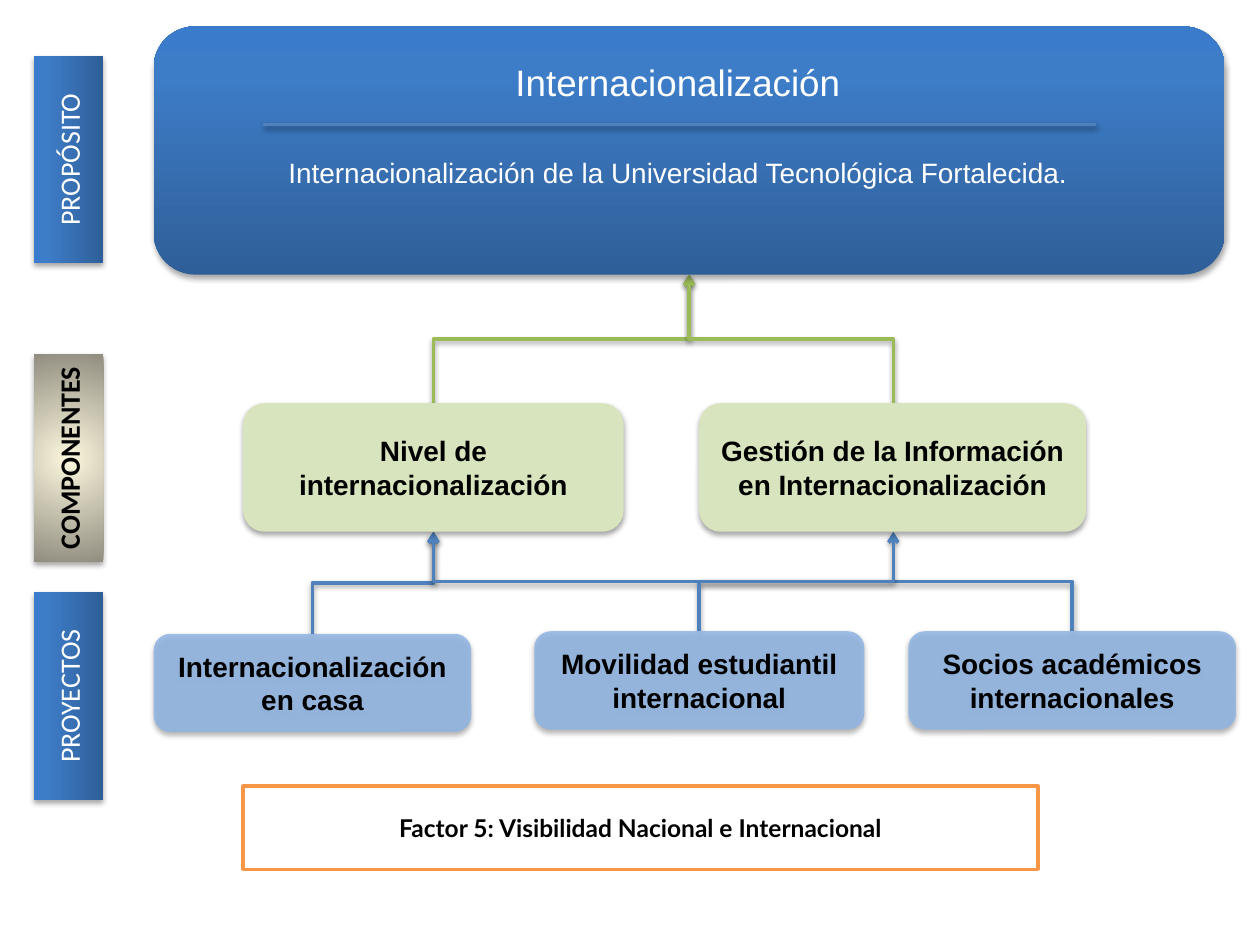
import pptx
import pptx.util
import pptx.dml.color
import pptx.enum.shapes
import pptx.enum.text
import pptx.oxml
import pptx.oxml.ns
from pptx.util import Inches

COLORS = {
    "white": "FFFFFF", "black": "000000", "blue": "4F81BD", "green": "9BBB59",
    "component": "D7E4BD", "project": "8EB4E3", "orange": "F79646",
    "deep": "2F5F99", "mid": "3D7CC7", "bright": "3A7CCB",
    "cream": "FCF7DD", "stone": "918E81",
}
NAMESPACE = pptx.oxml.ns.nsdecls("a")
BLUE_STOPS = [(0, "deep"), (80, "mid"), (100, "bright")]
BLUE_DIRECTION = '<a:lin ang="16200000" scaled="0"/>'
RADIAL_STOPS = [(0, "cream"), (100, "stone")]
RADIAL_DIRECTION = ('<a:path path="circle"><a:fillToRect l="50000" t="50000" '
                    'r="50000" b="50000"/></a:path>')
SHAPES = pptx.enum.shapes.MSO_SHAPE
CONNECTORS = pptx.enum.shapes.MSO_CONNECTOR
MIDDLE = pptx.enum.text.MSO_ANCHOR.MIDDLE
CENTER = pptx.enum.text.PP_ALIGN.CENTER


def write(shape, text, size, font, color, bold=False):
    frame = shape.text_frame
    frame.word_wrap = True
    frame.auto_size = pptx.enum.text.MSO_AUTO_SIZE.NONE
    frame.vertical_anchor = MIDDLE
    frame.text = text
    paragraph = frame.paragraphs[0]
    paragraph.alignment = CENTER
    paragraph.font.size = pptx.util.Pt(size)
    paragraph.font.name = font
    paragraph.font.bold = bold
    paragraph.font.color.rgb = pptx.dml.color.RGBColor.from_string(COLORS[color])


def add_shadow(shape, distance, alpha):
    shape._element.spPr.append(pptx.oxml.parse_xml(
        f'<a:effectLst {NAMESPACE}><a:outerShdw blurRad="40000" dist="{distance}" '
        f'dir="5400000" rotWithShape="0"><a:srgbClr val="{COLORS["black"]}">'
        f'<a:alpha val="{alpha}000"/></a:srgbClr></a:outerShdw></a:effectLst>'))


presentation = pptx.Presentation()
presentation.slide_width = Inches(10)
presentation.slide_height = Inches(7.5)
slide = presentation.slides.add_slide(presentation.slide_layouts[5])
shapes = slide.shapes

elbows = [
    (2.48, 5.03, 3.44, 4.22, "blue"),
    (8.51, 5.01, 3.44, 4.22, "blue"),
    (5.55, 5.01, 7.09, 4.22, "blue"),
    (3.44, 3.2, 5.47, 2.18, "green"),
    (7.09, 3.2, 5.47, 2.18, "green"),
]
lines = []
for start_x, start_y, end_x, end_y, color in elbows:
    center_x, center_y = (start_x + end_x) / 2, (start_y + end_y) / 2
    half_rise, half_run = (start_y - end_y) / 2, (end_x - start_x) / 2
    connector = shapes.add_connector(
        CONNECTORS.ELBOW,
        Inches(center_x - half_rise), Inches(center_y - half_run),
        Inches(center_x + half_rise), Inches(center_y + half_run))
    connector._element.spPr.xfrm.set("rot", "16200000")
    lines.append((connector, color, True))

gradient_boxes = [
    (SHAPES.RECTANGLE, -0.28, 0.99, 1.65, 0.55, "PROPÓSITO", "white", BLUE_STOPS, BLUE_DIRECTION),
    (SHAPES.RECTANGLE, -0.28, 3.36, 1.65, 0.55, "COMPONENTES", "black", RADIAL_STOPS, RADIAL_DIRECTION),
    (SHAPES.RECTANGLE, -0.28, 5.25, 1.65, 0.55, "PROYECTOS", "white", BLUE_STOPS, BLUE_DIRECTION),
    (SHAPES.ROUNDED_RECTANGLE, 1.22, 0.21, 8.5, 1.97, "", "white", BLUE_STOPS, BLUE_DIRECTION),
]
for kind, left, top, width, height, text, color, stops, direction in gradient_boxes:
    box = shapes.add_shape(kind, Inches(left), Inches(top), Inches(width), Inches(height))
    box.line.fill.background()
    stop_list = "".join(
        f'<a:gs pos="{position}000"><a:srgbClr val="{COLORS[name]}"/></a:gs>'
        for position, name in stops)
    box._element.spPr.insert(2, pptx.oxml.parse_xml(
        f'<a:gradFill {NAMESPACE} rotWithShape="1"><a:gsLst>{stop_list}</a:gsLst>'
        f'{direction}</a:gradFill>'))
    add_shadow(box, 23000, 35)
    if text:
        box.rotation = 270
        write(box, text, 16, "Calibri", color, bold=color == "black")

title = shapes.title
title.left, title.top = Inches(1.54), Inches(0.45)
title.width, title.height = Inches(7.68), Inches(0.4)
write(title, "Internacionalización", 21, "Arial", "white")
shapes._spTree.append(title._element)

purpose = shapes.add_textbox(Inches(1.54), Inches(1.18), Inches(7.68), Inches(0.38))
write(purpose, "Internacionalización de la Universidad Tecnológica Fortalecida.",
      16, "Arial", "white")

divider = shapes.add_connector(
    CONNECTORS.STRAIGHT, Inches(2.09), Inches(0.99), Inches(8.7), Inches(0.99))
lines.append((divider, "blue", False))

for connector, color, has_arrow in lines:
    connector.line.color.rgb = pptx.dml.color.RGBColor.from_string(COLORS[color])
    connector.line.width = pptx.util.Pt(2)
    if has_arrow:
        connector.line._get_or_add_ln().append(
            pptx.oxml.parse_xml(f'<a:tailEnd {NAMESPACE} type="arrow"/>'))
    add_shadow(connector, 20000, 38)

cards = [
    (1.93, 3.2, 3.02, 1.02, "component", "Nivel de internacionalización"),
    (5.55, 3.2, 3.07, 1.02, "component", "Gestión de la Información en Internacionalización"),
    (1.22, 5.03, 2.52, 0.78, "project", "Internacionalización en casa"),
    (4.24, 5.01, 2.62, 0.78, "project", "Movilidad estudiantil internacional"),
    (7.21, 5.01, 2.6, 0.78, "project", "Socios académicos internacionales"),
]
for left, top, width, height, color, text in cards:
    card = shapes.add_shape(SHAPES.ROUNDED_RECTANGLE, Inches(left), Inches(top),
                            Inches(width), Inches(height))
    card.fill.solid()
    card.fill.fore_color.rgb = pptx.dml.color.RGBColor.from_string(COLORS[color])
    if color == "project":
        fill_color = card._element.spPr.find(".//" + pptx.oxml.ns.qn("a:srgbClr"))
        fill_color.append(pptx.oxml.parse_xml(f'<a:alpha {NAMESPACE} val="84000"/>'))
    card.line.fill.background()
    add_shadow(card, 23000, 35)
    write(card, text, 16, "Arial", "black", bold=True)

factor = shapes.add_shape(SHAPES.RECTANGLE, Inches(1.93), Inches(6.24),
                          Inches(6.31), Inches(0.66))
factor.shadow.inherit = False
factor.fill.solid()
factor.fill.fore_color.rgb = pptx.dml.color.RGBColor.from_string(COLORS["white"])
factor.line.color.rgb = pptx.dml.color.RGBColor.from_string(COLORS["orange"])
factor.line.width = pptx.util.Pt(2)
write(factor, "Factor 5: Visibilidad Nacional e Internacional", 14, "Lato", "black", bold=True)

presentation.save("out.pptx")
